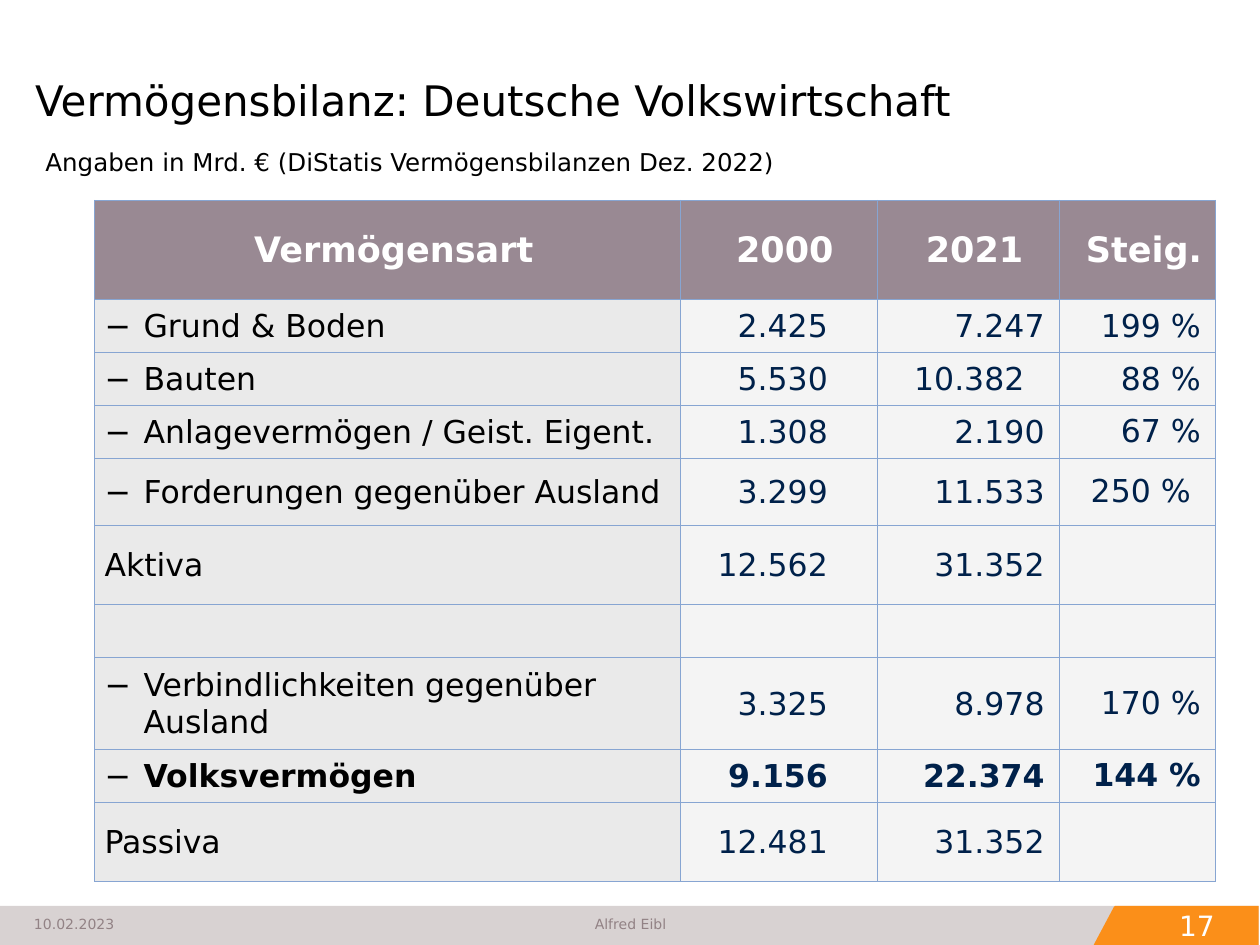
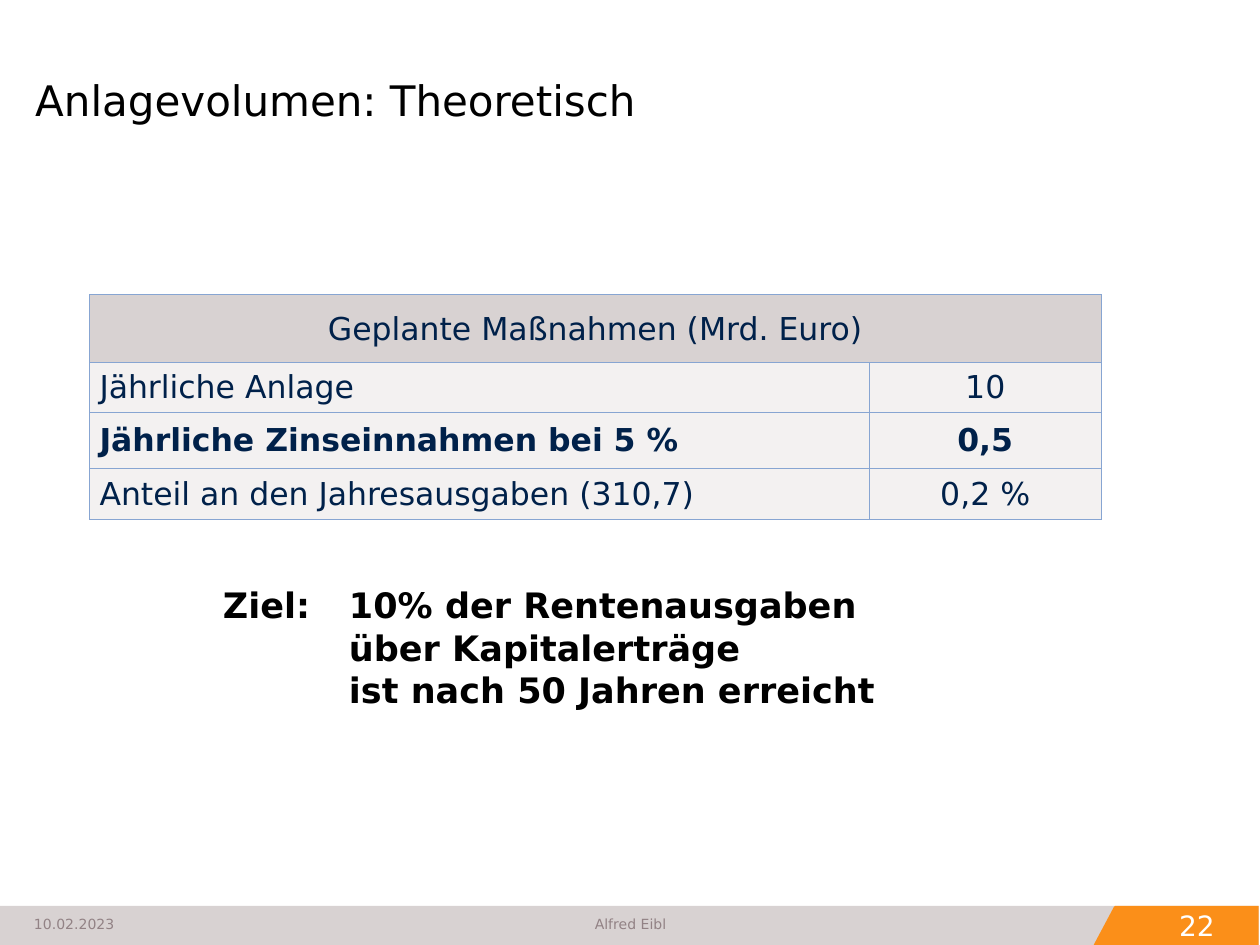
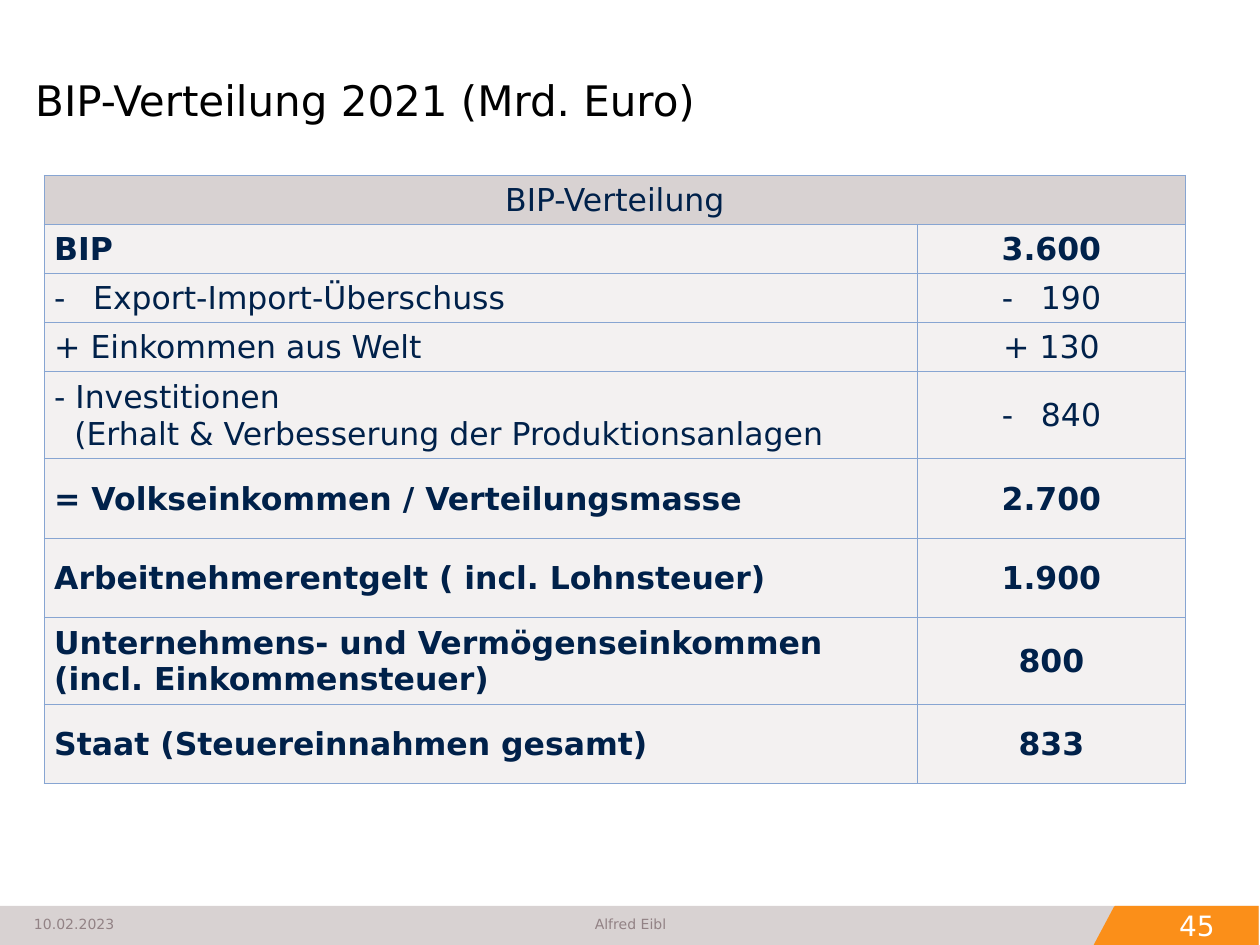
from dataclasses import dataclass
from typing import NamedTuple

from lxml import etree
from pptx import Presentation
from pptx.dml.color import RGBColor
from pptx.enum import shapes as kinds, text as txt
from pptx.oxml import ns
from pptx.util import Inches, Pt

FONT = "DejaVu Sans"
BLACK = RGBColor(0x00, 0x00, 0x00)
WHITE = RGBColor(0xFF, 0xFF, 0xFF)
NAVY = RGBColor(0x00, 0x21, 0x4A)
GREY = RGBColor(0x92, 0x82, 0x85)
BAND = RGBColor(0xD8, 0xD2, 0xD2)
ORANGE = RGBColor(0xFB, 0x8F, 0x19)
MAUVE = RGBColor(0x99, 0x89, 0x93)
SILVER = RGBColor(0xEA, 0xEA, 0xEA)
PALE = RGBColor(0xF4, 0xF4, 0xF4)
ROSE = RGBColor(0xF3, 0xF1, 0xF1)
BORDER = RGBColor(0x87, 0xA5, 0xD2)

LEFT, MID, RIGHT = txt.PP_ALIGN.LEFT, txt.PP_ALIGN.CENTER, txt.PP_ALIGN.RIGHT
MIDDLE = txt.MSO_ANCHOR.MIDDLE
SHAPE = kinds.MSO_SHAPE


class Box(NamedTuple):
    left: float
    top: float
    width: float
    height: float

    def emu(self) -> list:
        return [Inches(side) for side in self]


class Pad(NamedTuple):
    left: float = 0
    top: float = 0
    right: float = 0
    bottom: float = 0


class Item(NamedTuple):
    text: str
    bullet: str = ""
    hang: float = 0.31


class Col(NamedTuple):
    width: float
    align: txt.PP_ALIGN
    pad: Pad
    fill: RGBColor
    color: RGBColor = NAVY


class Row(NamedTuple):
    height: float
    cells: list
    bold: bool = False


class Part(NamedTuple):
    kind: SHAPE
    box: Box
    fill: RGBColor


CELL = Pad(0.08, 0.05, 0.08, 0.04)


@dataclass
class Grid:
    left: float
    top: float
    cols: list
    rows: list
    fill: RGBColor = BAND
    color: RGBColor = NAVY
    size: int = 18
    pad: Pad = CELL


PARTS = [
    Part(SHAPE.RECTANGLE, Box(-0.01, 7.19, 10, 0.31), BAND),
    Part(SHAPE.RECTANGLE, Box(8.85, 7.19, 1.14, 0.31), ORANGE),
    Part(SHAPE.ISOSCELES_TRIANGLE, Box(8.68, 7.19, 0.33, 0.31), ORANGE),
]


def write(frame, text: str, *, size: float = 18, color: RGBColor = BLACK,
          bold: bool = False, align: txt.PP_ALIGN = LEFT, bullet: str = "",
          hang: float = 0, after: float = 0) -> None:
    para = frame.paragraphs[0]
    para.text = text
    para.alignment = align
    para.space_after = Pt(after)
    props = para._p.get_or_add_pPr()
    if hang:
        props.set("marL", str(Inches(hang)))
        props.set("indent", str(-Inches(hang)))
    if bullet:
        etree.SubElement(props, ns.qn("a:buFont")).set("typeface", FONT)
        etree.SubElement(props, ns.qn("a:buChar")).set("char", bullet)
    for run in para.runs:
        run.font.name = FONT
        run.font.size = Pt(size)
        run.font.bold = bold
        run.font.color.rgb = color


def inset(owner, pad: Pad) -> None:
    for side, value in pad._asdict().items():
        setattr(owner, f"margin_{side}", Inches(value))


def label(slide, box: Box, text: str, *, pad: Pad = Pad(), wrap: bool = True,
          anchor: txt.MSO_ANCHOR = MIDDLE, **style) -> None:
    frame = slide.shapes.add_textbox(*box.emu()).text_frame
    frame.word_wrap = wrap
    frame.vertical_anchor = anchor
    inset(frame, pad)
    write(frame, text, **style)


def edge(cell) -> None:
    props = cell._tc.get_or_add_tcPr()
    for index, side in enumerate(("lnL", "lnR", "lnT", "lnB")):
        line = etree.Element(ns.qn(f"a:{side}"), w=str(Pt(0.5)))
        fill = etree.SubElement(line, ns.qn("a:solidFill"))
        etree.SubElement(fill, ns.qn("a:srgbClr"), val=str(BORDER))
        props.insert(index, line)


def draw(slide, grid: Grid):
    box = Box(grid.left, grid.top, sum(col.width for col in grid.cols),
              sum(row.height for row in grid.rows))
    table = slide.shapes.add_table(
        len(grid.rows), len(grid.cols), *box.emu()).table
    table.first_row = table.horz_banding = False
    for index, col in enumerate(grid.cols):
        table.columns[index].width = Inches(col.width)
    for top, row in enumerate(grid.rows):
        table.rows[top].height = Inches(row.height)
        head = top == 0
        for index, col in enumerate(grid.cols):
            cell = table.cell(top, index)
            cell.fill.solid()
            cell.fill.fore_color.rgb = grid.fill if head else col.fill
            cell.vertical_anchor = MIDDLE
            inset(cell, grid.pad if head else col.pad)
            edge(cell)
            if index >= len(row.cells):
                continue
            item = row.cells[index]
            if isinstance(item, str):
                item = Item(item, hang=0)
            write(cell.text_frame, item.text, bullet=item.bullet,
                  hang=item.hang, bold=row.bold,
                  size=grid.size if head else 18,
                  color=grid.color if head else col.color,
                  align=MID if head else col.align)
    if len(grid.rows[0].cells) == 1:
        table.cell(0, 0).merge(table.cell(0, len(grid.cols) - 1))
    return table


def start(deck, title: str, number: int):
    slide = deck.slides.add_slide(deck.slide_layouts[6])
    for part in PARTS:
        shape = slide.shapes.add_shape(part.kind, *part.box.emu())
        shape.shadow.inherit = False
        shape.fill.solid()
        shape.fill.fore_color.rgb = part.fill
        shape.line.fill.background()
    label(slide, Box(0.28, 0.21, 7.9, 0.79), title, size=24,
          anchor=txt.MSO_ANCHOR.BOTTOM, pad=Pad(bottom=0.01))
    label(slide, Box(0.27, 7.17, 0.8, 0.33), "10.02.2023", size=8,
          color=GREY)
    label(slide, Box(4.69, 7.17, 0.63, 0.33), "Alfred Eibl", size=8,
          color=GREY, align=MID, wrap=False)
    label(slide, Box(9.33, 7.17, 0.31, 0.34), str(number), size=16,
          color=WHITE, align=RIGHT, wrap=False)
    return slide


def pair(first: float, second: float) -> list:
    return [Col(first, LEFT, CELL, ROSE), Col(second, MID, CELL, ROSE)]


def wealth(deck) -> None:
    slide = start(deck, "Vermögensbilanz: Deutsche Volkswirtschaft", 17)
    cols = [
        Col(4.65, LEFT, CELL, SILVER, BLACK),
        Col(1.56, RIGHT, Pad(0.01, 0.01, 0.39, 0), PALE),
        Col(1.45, RIGHT, Pad(0.01, 0.01, 0.12, 0), PALE),
        Col(1.24, RIGHT, Pad(0.04, 0.04, 0.12, 0.04), PALE),
    ]

    def entry(height: float, name: str, *values: str,
              bold: bool = False) -> Row:
        return Row(height, [Item(name, "−"), *values], bold)

    rows = [
        Row(0.79, ["Vermögensart", "2000", "2021", "Steig."], True),
        entry(0.42, "Grund & Boden", "2.425", "7.247", "199 %"),
        entry(0.42, "Bauten", "5.530", "10.382", "88 %"),
        entry(0.42, "Anlagevermögen / Geist. Eigent.",
              "1.308", "2.190", "67 %"),
        entry(0.53, "Forderungen gegenüber Ausland",
              "3.299", "11.533", "250 % "),
        Row(0.63, ["Aktiva", "12.562", "31.352"]),
        Row(0.42, []),
        entry(0.73, "Verbindlichkeiten gegenüber Ausland",
              "3.325", "8.978", "170 %"),
        entry(0.42, "Volksvermögen", "9.156", "22.374", "144 %", bold=True),
        Row(0.63, ["Passiva", "12.481", "31.352"]),
    ]
    table = draw(slide, Grid(0.75, 1.59, cols, rows, MAUVE, WHITE, 20,
                             Pad(0.1, 0.05, 0, 0.05)))
    table.cell(2, 2).margin_right = Inches(0.28)
    label(slide, Box(0.28, 1.09, 7.72, 0.42),
          "Angaben in Mrd. € (DiStatis Vermögensbilanzen Dez. 2022)",
          size=14, anchor=txt.MSO_ANCHOR.TOP, pad=Pad(0.08, 0.08, 0.08, 0.08))


def volume(deck) -> None:
    slide = start(deck, "Anlagevolumen: Theoretisch", 22)
    draw(slide, Grid(0.71, 2.34, pair(6.19, 1.84), [
        Row(0.54, ["Geplante Maßnahmen (Mrd. Euro)"]),
        Row(0.39, ["Jährliche Anlage", "10"]),
        Row(0.45, ["Jährliche Zinseinnahmen bei 5 %", "0,5"], True),
        Row(0.4, ["Anteil an den Jahresausgaben (310,7)", "0,2 %"]),
    ]))
    label(slide, Box(1.77, 4.63, 8.13, 1.01),
          "Ziel:\t10% der Rentenausgaben\nüber Kapitalerträge\n"
          "ist nach 50 Jahren erreicht",
          size=20, bold=True, hang=1, after=3)


def income(deck) -> None:
    slide = start(deck, "BIP-Verteilung 2021 (Mrd. Euro)", 45)
    draw(slide, Grid(0.35, 1.39, pair(6.93, 2.13), [
        Row(0.39, ["BIP-Verteilung"]),
        Row(0.39, ["BIP", "3.600"], True),
        Row(0.39, [Item("Export-Import-Überschuss", "-"), Item("190", "-")]),
        Row(0.39, ["+ Einkommen aus Welt", "+ 130"]),
        Row(0.68, [Item("- Investitionen\n(Erhalt & Verbesserung der "
                        "Produktionsanlagen", hang=0.16), Item("840", "-")]),
        Row(0.63, ["= Volkseinkommen / Verteilungsmasse", "2.700"], True),
        Row(0.63, ["Arbeitnehmerentgelt ( incl. Lohnsteuer)", "1.900"], True),
        Row(0.68, ["Unternehmens- und Vermögenseinkommen\n"
                   "(incl. Einkommensteuer)", "800"], True),
        Row(0.63, ["Staat (Steuereinnahmen gesamt)", "833"], True),
    ]))


def main() -> None:
    deck = Presentation()
    deck.slide_width, deck.slide_height = Inches(10), Inches(7.5)
    for build in (wealth, volume, income):
        build(deck)
    deck.save("out.pptx")


if __name__ == "__main__":
    main()
